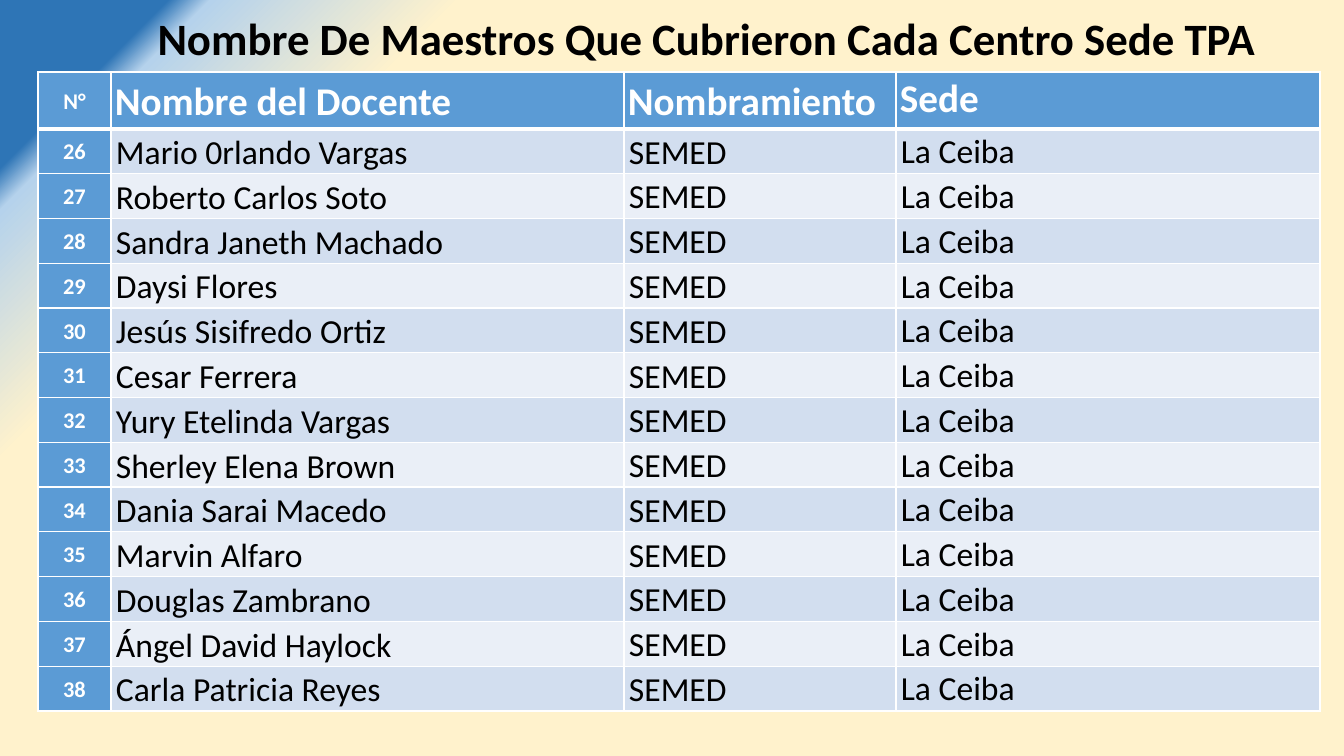
"""Build the slide that lists the teachers who covered each TPA centre."""
from dataclasses import dataclass

from pptx import Presentation
from pptx.dml.color import RGBColor
from pptx.enum.text import MSO_ANCHOR as Anchor, MSO_AUTO_SIZE as AutoSize, PP_ALIGN as Align
from pptx.oxml import parse_xml
from pptx.oxml.ns import nsdecls
from pptx.util import Pt

PX = 914400 / 100.8


@dataclass(frozen=True)
class Theme:
    font: str = "Calibri"
    black: str = "000000"
    white: str = "FFFFFF"
    accent: str = "5B9BD5"
    bands: tuple = ("D2DEEF", "EAEFF7")
    backdrop: tuple = ((78, "FFF2CC"), (90, "B5D2EC"), (92, "2E75B6"))
    title: int = 32
    heading: int = 28
    body: int = 24
    number: int = 16
    thin: int = 1
    thick: int = 3


THEME = Theme()


def px(count):
    return round(count * PX)


def add_span(para, text, size, color, bold):
    span = para.add_run()
    span.text = text
    span.font.name = THEME.font
    span.font.size = Pt(size)
    span.font.bold = bold
    span.font.color.rgb = RGBColor.from_string(color)


HEADINGS = ("N°", "Nombre del Docente", "Nombramiento", "Sede")
FIRST_NUMBER = 26
TEACHERS = (
    "Mario 0rlando Vargas", "Roberto Carlos Soto", "Sandra Janeth Machado",
    "Daysi Flores", "Jesús Sisifredo Ortiz", "Cesar Ferrera",
    "Yury Etelinda Vargas", "Sherley Elena Brown", "Dania Sarai Macedo",
    "Marvin Alfaro", "Douglas Zambrano", "Ángel David Haylock",
    "Carla Patricia Reyes",
)
APPOINTMENT, CENTRE = "SEMED", "La Ceiba"
COLUMN_WIDTHS = (73, 513, 272, 424)
HEADER_HEIGHT, BODY_HEIGHT = 57, 582
HEADER_ANCHORS = (Anchor.MIDDLE, Anchor.MIDDLE, Anchor.MIDDLE, Anchor.TOP)
BODY_ANCHORS = (Anchor.MIDDLE, Anchor.BOTTOM, Anchor.MIDDLE, Anchor.TOP)

deck = Presentation()
deck.slide_width, deck.slide_height = px(1344), px(756)
page = deck.slides.add_slide(deck.slide_layouts[6])

stops = "".join(
    f'<a:gs pos="{place * 1000}"><a:srgbClr val="{color}"/></a:gs>'
    for place, color in THEME.backdrop
)
page.background.fill.solid()
backdrop = page.background.fill._xPr
backdrop.replace(backdrop[0], parse_xml(
    f'<a:gradFill {nsdecls("a")} rotWithShape="1"><a:gsLst>{stops}</a:gsLst>'
    '<a:path path="circle"><a:fillToRect l="100000" t="100000"/></a:path></a:gradFill>'
))

title_box = page.shapes.add_textbox(px(111), px(6), px(1202), px(64))
title_box.text_frame.word_wrap = True
title_box.text_frame.auto_size = AutoSize.SHAPE_TO_FIT_TEXT
title_para = title_box.text_frame.paragraphs[0]
title_para.alignment = Align.CENTER
add_span(title_para, "Nombre De Maestros Que Cubrieron Cada Centro Sede TPA ",
         THEME.title, THEME.black, True)

records = [HEADINGS] + [
    (str(number), teacher, APPOINTMENT, CENTRE)
    for number, teacher in enumerate(TEACHERS, FIRST_NUMBER)
]
table = page.shapes.add_table(
    len(records), len(HEADINGS), px(38), px(72),
    px(sum(COLUMN_WIDTHS)), px(HEADER_HEIGHT + BODY_HEIGHT),
).table
for column, width in zip(table.columns, COLUMN_WIDTHS):
    column.width = px(width)

for row_index, record in enumerate(records):
    is_header = row_index == 0
    table.rows[row_index].height = px(HEADER_HEIGHT if is_header else BODY_HEIGHT / len(TEACHERS))
    for column_index, text in enumerate(record):
        is_number = column_index == 0
        is_accent = is_header or is_number
        cell = table.cell(row_index, column_index)
        cell.vertical_anchor = (HEADER_ANCHORS if is_header else BODY_ANCHORS)[column_index]
        cell.margin_left = cell.margin_right = px(4 if is_accent else 5)
        cell.margin_top = cell.margin_bottom = 0
        cell.fill.solid()
        cell.fill.fore_color.rgb = RGBColor.from_string(
            THEME.accent if is_accent else THEME.bands[(row_index - 1) % 2])

        para = cell.text_frame.paragraphs[0]
        para.alignment = Align.CENTER if is_number else Align.LEFT
        para.line_spacing = 1.07
        size = THEME.number if is_number else THEME.heading if is_header else THEME.body
        add_span(para, text, size, THEME.white if is_accent else THEME.black, is_accent)

        borders = {
            "L": THEME.thin,
            "R": THEME.thin,
            "T": THEME.thick if row_index == 1 else THEME.thin,
            "B": THEME.thick if is_header else THEME.thin,
        }
        properties = cell._tc.get_or_add_tcPr()
        for order, (side, width) in enumerate(borders.items()):
            properties.insert(order, parse_xml(
                f'<a:ln{side} {nsdecls("a")} w="{Pt(width)}"><a:solidFill>'
                f'<a:srgbClr val="{THEME.white}"/></a:solidFill></a:ln{side}>'
            ))

deck.save("out.pptx")
